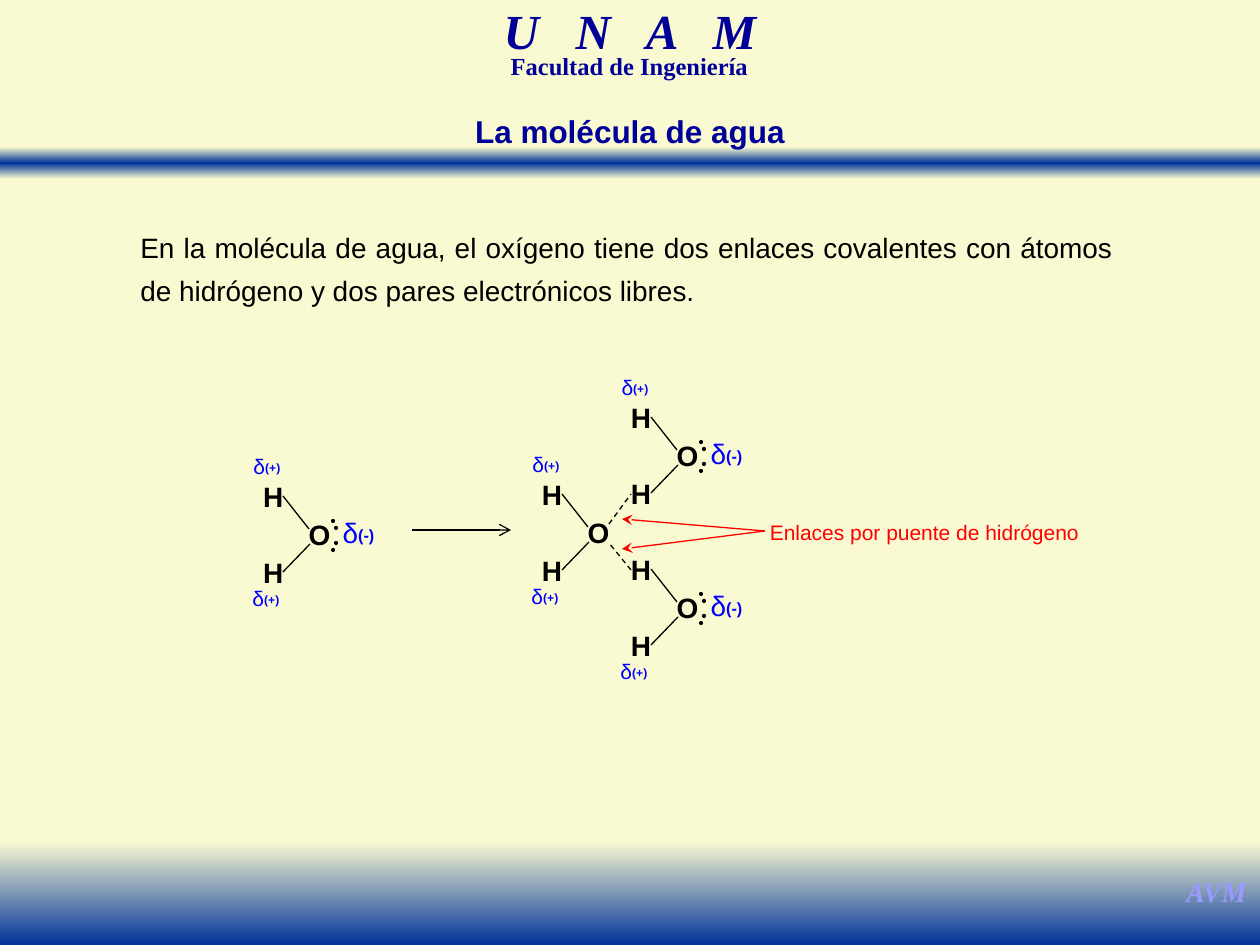
from copy import deepcopy
from dataclasses import dataclass
from typing import Optional

from lxml import etree
from pptx import Presentation
from pptx import util as u
from pptx.dml import color as dml_color
from pptx.enum import dml, shapes, text
from pptx.oxml import ns

PX_PER_INCH = 126
CREAM, BLUE, NAVY, LILAC = "FAFAD2", "003399", "000099", "9999FF"
BLACK, CHARGE_BLUE, RED = "000000", "0000FF", "FF0000"
ARIAL, TIMES = "Arial", "Times New Roman"


@dataclass(frozen=True)
class Box:
    left: int
    top: int
    width: int
    height: int


@dataclass(frozen=True)
class Piece:
    wording: str
    size: int
    color: str
    font: str = ARIAL
    bold: bool = False
    italic: bool = False
    baseline: int = 0
    spacing: int = 0


@dataclass(frozen=True)
class Molecule:
    x: int
    y: int
    upper_charge: bool = True
    lower_charge: bool = True
    lone_pairs: bool = True


def px(length: int) -> int:
    return round(length * u.Inches(1) / PX_PER_INCH)


def rgb(value: str) -> dml_color.RGBColor:
    return dml_color.RGBColor.from_string(value)


def apply(target, values: dict) -> None:
    for name, value in values.items():
        setattr(target, name, value)


def add_text(parent, box: Box, pieces: list[Piece], inset: bool = False,
             wrap: bool = False, paragraph_format: Optional[dict] = None,
             indent: int = 0) -> None:
    shape = parent.add_textbox(px(box.left), px(box.top), px(box.width), px(box.height))
    frame = shape.text_frame
    apply(frame, {"word_wrap": wrap, "auto_size": text.MSO_AUTO_SIZE.SHAPE_TO_FIT_TEXT})
    if not inset:
        apply(frame, dict.fromkeys(
            ("margin_left", "margin_top", "margin_right", "margin_bottom"), 0))
    paragraph = frame.paragraphs[0]
    apply(paragraph, {"alignment": text.PP_ALIGN.CENTER} | (paragraph_format or {}))
    if indent:
        properties = paragraph._p.get_or_add_pPr()
        properties.set("marL", str(px(indent)))
        properties.set("indent", "0")
    for piece in pieces:
        run = paragraph.add_run()
        run.text = piece.wording
        apply(run.font, {"name": piece.font, "size": u.Pt(piece.size),
                         "bold": piece.bold, "italic": piece.italic})
        run.font.color.rgb = rgb(piece.color)
        properties = run._r.get_or_add_rPr()
        if piece.baseline:
            properties.set("baseline", str(piece.baseline * 1000))
        if piece.spacing:
            properties.set("spc", str(piece.spacing * 100))


def add_line(parent, start: tuple[int, int], end: tuple[int, int], color: str = BLACK,
             head: str = "", dashed: bool = False) -> None:
    line = parent.add_connector(shapes.MSO_CONNECTOR.STRAIGHT,
                                *(px(value) for value in start + end))
    line.line.width = u.Pt(0.75)
    line.line.color.rgb = rgb(color)
    if dashed:
        line.line.dash_style = dml.MSO_LINE.DASH
    properties = line._element.spPr
    if head:
        etree.SubElement(properties.find(ns.qn("a:ln")), ns.qn("a:tailEnd"), type=head)
    etree.SubElement(properties, ns.qn("a:effectLst"))


def add_plain_shape(parent, kind, box: Box):
    shape = parent.add_shape(kind, px(box.left), px(box.top), px(box.width), px(box.height))
    shape.shadow.inherit = False
    shape.line.fill.background()
    return shape


def add_band(parent, box: Box, colors: list[str]) -> None:
    fill = (shape := add_plain_shape(parent, shapes.MSO_SHAPE.RECTANGLE, box)).fill
    fill.gradient()
    fill.gradient_angle = 270
    stop_list = shape._element.spPr.find(ns.qn("a:gradFill")).find(ns.qn("a:gsLst"))
    while len(stop_list) < len(colors):
        stop_list.append(deepcopy(stop_list[-1]))
    for index, (stop, color) in enumerate(zip(fill.gradient_stops, colors)):
        stop.position = index / (len(colors) - 1)
        stop.color.rgb = rgb(color)


def add_charge(parent, box: Box, sign: str, size: int) -> None:
    add_text(parent, box, [Piece("δ", size, CHARGE_BLUE),
                           Piece(f"({sign})", size, CHARGE_BLUE, bold=True, baseline=10)])


def add_molecule(parent, molecule: Molecule) -> None:
    x, y = molecule.x, molecule.y
    for symbol, dx, dy, width in (("H", 0, 0, 20), ("O", 45, 38, 23), ("H", 0, 76, 20)):
        add_text(parent, Box(x + dx, y + dy, width, 34),
                 [Piece(symbol, 16, BLACK, bold=True)])
    add_line(parent, (x + 20, y + 16), (x + 46, y + 49))
    add_line(parent, (x + 20, y + 92), (x + 47, y + 64))
    if molecule.upper_charge:
        add_charge(parent, Box(x - 10, y - 26, 28, 25), "+", 12)
    if molecule.lower_charge:
        add_charge(parent, Box(x - 11, y + 106, 28, 25), "+", 12)
    if molecule.lone_pairs:
        for dx, dy in ((68, 39), (71, 46), (71, 61), (68, 68)):
            dot = add_plain_shape(parent, shapes.MSO_SHAPE.OVAL, Box(x + dx, y + dy, 4, 4))
            dot.fill.solid()
            dot.fill.fore_color.rgb = rgb(BLACK)
        add_charge(parent, Box(x + 79, y + 36, 33, 34), "-", 16)


def main() -> None:
    presentation = Presentation()
    apply(presentation, {"slide_width": px(1260), "slide_height": px(945)})
    slide = presentation.slides.add_slide(presentation.slide_layouts[6])
    slide.background.fill.solid()
    slide.background.fill.fore_color.rgb = rgb(CREAM)
    canvas = slide.shapes

    add_band(canvas, Box(0, 147, 1260, 32), [CREAM, BLUE, CREAM])
    tight = {"line_spacing": 0.7}
    add_text(canvas, Box(383, 10, 494, 54),
             [Piece("U N A ", 28, NAVY, TIMES, True, True, spacing=7),
              Piece("M", 28, NAVY, TIMES, True, True)], True, True, tight)
    add_text(canvas, Box(404, 53, 451, 33),
             [Piece("Facultad de Ingeniería", 14, NAVY, TIMES, True)], True, True, tight)
    add_band(canvas, Box(0, 841, 1260, 104), [CREAM, BLUE])
    add_text(canvas, Box(1173, 868, 87, 47),
             [Piece("AVM", 16, LILAC, TIMES, True, True)], True)
    add_text(canvas, Box(102, 214, 1023, 101),
             [Piece("En la molécula de agua, el oxígeno tiene dos enlaces covalentes con "
                    "átomos de hidrógeno y dos pares electrónicos libres.", 16, BLACK)],
             True, True, {"alignment": text.PP_ALIGN.JUSTIFY, "line_spacing": 1.3}, 26)
    add_text(canvas, Box(357, 106, 546, 50),
             [Piece("La molécula de agua", 18, NAVY, bold=True)], True, True)

    add_molecule(canvas.add_group_shape().shapes, Molecule(263, 480))
    add_line(canvas, (412, 530), (511, 530), head="arrow")

    bonded = canvas.add_group_shape().shapes
    for molecule in (Molecule(542, 478, lone_pairs=False),
                     Molecule(631, 401, lower_charge=False),
                     Molecule(631, 553, upper_charge=False)):
        add_molecule(bonded, molecule)
    add_line(bonded, (609, 524), (631, 494), dashed=True)
    add_line(bonded, (631, 570), (609, 543), dashed=True)

    for target in ((622, 519), (622, 549)):
        add_line(canvas, (765, 531), target, RED, "stealth")
    add_text(canvas, Box(769, 520, 311, 25),
             [Piece("Enlaces por puente de hidrógeno", 12, RED)])

    presentation.save("out.pptx")


if __name__ == "__main__":
    main()
